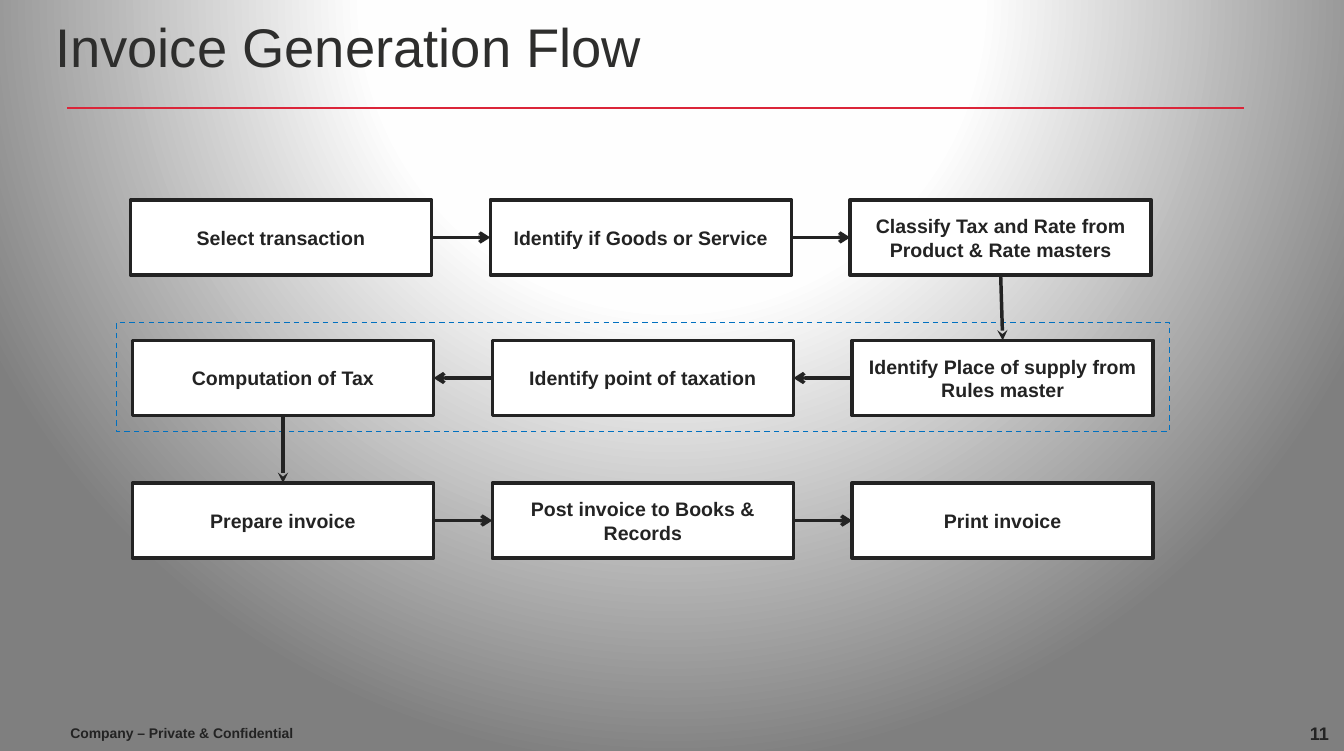
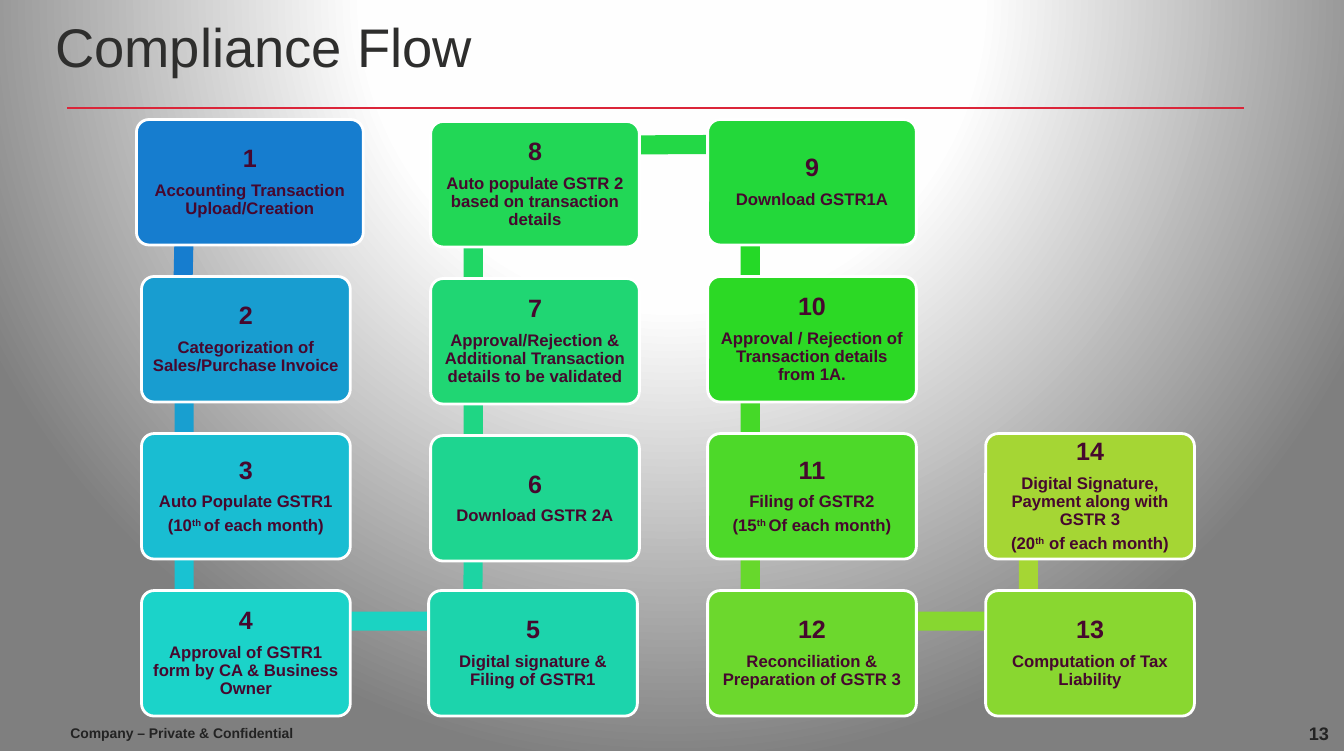
from lxml import etree
from pptx import Presentation
from pptx.dml.color import RGBColor
from pptx.enum.dml import MSO_LINE
from pptx.enum.shapes import MSO_CONNECTOR, MSO_SHAPE
from pptx.enum.text import MSO_ANCHOR, PP_ALIGN
from pptx.oxml import parse_xml
from pptx.oxml.ns import nsdecls, qn
from pptx.util import Inches, Pt

RECT = MSO_SHAPE.RECTANGLE
ROUND = MSO_SHAPE.ROUNDED_RECTANGLE
LINE = MSO_CONNECTOR.STRAIGHT
DASH = MSO_LINE.DASH
TOP, MID = MSO_ANCHOR.TOP, MSO_ANCHOR.MIDDLE
LEFT, MIDST, RIGHT = PP_ALIGN.LEFT, PP_ALIGN.CENTER, PP_ALIGN.RIGHT

FONT = "Arial"
INK, WHITE, RED, BLUE = "232323", "FFFFFF", "DB2539", "0070C0"
HEAD, PLUM = "2E2E2D", "46082E"
STOPS = [(0, "FFFFFF"), (40, "FEFEFE"), (100, "7F7F7F")]
FOOT = "Company – Private & Confidential"

STEPS = [
    (0, 0, "Select transaction"),
    (1, 0, "Identify if Goods or Service"),
    (2, 0, "Classify Tax and Rate from Product & Rate masters"),
    (2, 1, "Identify Place of supply from Rules master"),
    (1, 1, "Identify point of taxation"),
    (0, 1, "Computation of Tax"),
    (0, 2, "Prepare invoice"),
    (1, 2, "Post invoice to Books & Records"),
    (2, 2, "Print invoice"),
]
ROWS = [1.99, 3.39, 4.81]

CARDS = [
    (0, 0, "167DCF", ["Accounting Transaction Upload/Creation"]),
    (0, 1, "189DD0", ["Categorization of Sales/Purchase Invoice"]),
    (0, 2, "19BDD2", ["Auto Populate GSTR1", ("(10", "th ", "of each month)")]),
    (0, 3, "1BD3C9", ["Approval of GSTR1 form by CA & Business Owner"]),
    (1, 3, "1CD4AC", ["Digital signature & Filing of GSTR1"]),
    (1, 2, "1ED590", ["Download GSTR 2A"]),
    (1, 1, "20D673", ["Approval/Rejection & Additional Transaction "
                      "details to be validated"]),
    (1, 0, "22D756", ["Auto populate GSTR 2 based on transaction details"]),
    (2, 0, "23D83A", ["Download GSTR1A"]),
    (2, 1, "2CD925", ["Approval / Rejection of Transaction details from 1A."]),
    (2, 2, "4DD929", ["Filing of GSTR2", ("(15", "th ", "Of each month)")]),
    (2, 3, "6CD82D", ["Reconciliation & Preparation of GSTR 3"]),
    (3, 3, "89D730", ["Computation of Tax Liability"]),
    (3, 2, "A5D634", ["Digital Signature, Payment along with GSTR 3",
                      ("(20", "th", " of each month)")]),
]
LINKS = ["167DCF", "189FD0", "19C2D2", "1BD3C2", "1DD4A3", "1FD684", "21D765",
         "23D846", "25D927", "45D928", "67D82C", "87D730", "A5D634"]
COLS = [1.41, 4.29, 7.05, 9.82]
TILT = {1: 1.2, 5: 0.4, 8: -0.3}
NUDGE = {1: (-0.05, 0, 0.18), 5: (-0.02, 0, 0), 6: (0, 0.02, 0),
         7: (0, 0.02, 0), 8: (0, 0.02, 0)}


def rgb(code):
    return RGBColor.from_string(code)


def inches(*vals):
    return [Inches(v) for v in vals]


def backdrop(master):
    fill = master.background.fill
    fill.gradient()
    old = next(master.element.iter(qn("a:gradFill")))
    stops = "".join(f'<a:gs pos="{pos * 1000}"><a:srgbClr val="{code}"/></a:gs>'
                    for pos, code in STOPS)
    new = parse_xml(
        f'<a:gradFill {nsdecls("a")} rotWithShape="1"><a:gsLst>{stops}</a:gsLst>'
        '<a:path path="circle"><a:fillToRect l="50000" t="-80000" r="50000" '
        'b="180000"/></a:path></a:gradFill>')
    old.getparent().replace(old, new)


def frame(shape, anchor, side, edge):
    box = shape.text_frame
    box.word_wrap = True
    box.vertical_anchor = anchor
    box.margin_left = box.margin_right = Inches(side)
    box.margin_top = box.margin_bottom = Inches(edge)
    return box


def write(para, text, size, color, bold=True, lift=False):
    run = para.add_run()
    run.text = text
    font = run.font
    font.name, font.size, font.bold = FONT, Pt(size), bold
    font.color.rgb = rgb(color)
    if lift:
        font._element.set("baseline", "30000")


def label(slide, at, text, size, color=INK, bold=True, align=LEFT,
          anchor=MID, side=0.13):
    box = frame(slide.shapes.add_textbox(*inches(*at)), anchor, side, 0.06)
    para = box.paragraphs[0]
    para.alignment = align
    write(para, text, size, color, bold)


def block(slide, at, fill=None, line=None, width=1, kind=RECT):
    shape = slide.shapes.add_shape(kind, *inches(*at))
    shape.shadow.inherit = False
    if fill:
        shape.fill.solid()
        shape.fill.fore_color.rgb = rgb(fill)
    else:
        shape.fill.background()
    if line:
        shape.line.color.rgb = rgb(line)
        shape.line.width = Pt(width)
    else:
        shape.line.fill.background()
    return shape


def rule(slide, ends, color, width, tip=None):
    line = slide.shapes.add_connector(LINE, *inches(*ends))
    line.line.color.rgb = rgb(color)
    line.line.width = Pt(width)
    if tip:
        etree.SubElement(line.line._get_or_add_ln(), qn("a:tailEnd"), type=tip)
    etree.SubElement(line._element.spPr, qn("a:effectLst"))
    return line


def page(deck, title, num):
    slide = deck.slides.add_slide(deck.slide_layouts[6])
    label(slide, (12.19, 7.13, 1.18, 0.35), num, 13, align=RIGHT)
    rule(slide, (0.67, 1.08, 12.39, 1.08), RED, 1.5)
    label(slide, (0.57, 7.16, 8.38, 0.3), FOOT, 10, anchor=TOP)
    label(slide, (0.55, 0, 12.26, 0.92), title, 39, HEAD, False, side=0)
    return slide


def step(slide, col, row, text):
    left = 1.3 + 3.585 * col + (0.02 if row else 0)
    shape = block(slide, (left, ROWS[row], 3, 0.75), WHITE, INK, 2.5)
    para = frame(shape, MID, 0.1, 0.1).paragraphs[0]
    para.alignment = MIDST
    write(para, text, 14, INK)
    return shape


def arrow(slide, start, end, across):
    tip = "arrow" if across else "stealth"
    line = rule(slide, (0, 0, 1, 1), INK, 2.5, tip)
    out, into = {1: (3, 1), -1: (1, 3), 0: (2, 0)}[across]
    line.begin_connect(start, out)
    line.end_connect(end, into)


def invoice(slide):
    boxes = [step(slide, *item) for item in STEPS]
    area = block(slide, (1.16, 3.21, 10.49, 1.09), line=BLUE)
    area.line.dash_style = DASH
    for i in range(len(boxes) - 1):
        arrow(slide, boxes[i], boxes[i + 1], STEPS[i + 1][0] - STEPS[i][0])


def place(num):
    col, row = CARDS[num - 1][:2]
    return COLS[col], 1.19 + 1.564 * row


def link(slide, num, color):
    (left, top), (left2, top2) = place(num), place(num + 1)
    if left == left2:
        at = (left + 0.33, min(top, top2) + 0.31, 0.19, 1.56)
    else:
        drop = 0.21 if top > 2 else 0.16
        at = (left + 0.42, top + drop, left2 - left, 0.19)
    block(slide, at, color).rotation = TILT.get(num, 0)


def card(slide, num, color, lines):
    left, top = place(num)
    dx, dy, grow = NUDGE.get(num, (0, 0, 0))
    at = (left + dx, top + dy, 2.08 + grow, 1.25)
    shape = block(slide, at, color, WHITE, 2, ROUND)
    shape.adjustments[0] = 0.1
    inset = 0.05 if num in (11, 14) else 0.07
    box = frame(shape, MID, inset, inset)
    for i, text in enumerate([str(num)] + lines):
        para = box.add_paragraph() if i else box.paragraphs[0]
        size = 12 if i else 18
        para.alignment = MIDST
        para.line_spacing = 0.9
        para.space_after = Pt(0.35 * size)
        parts = (text,) if isinstance(text, str) else text
        for j, part in enumerate(parts):
            write(para, part, size, PLUM, lift=j == 1)


def comply(slide):
    for num, color in enumerate(LINKS, 1):
        link(slide, num, color)
    for num, (_, _, color, lines) in enumerate(CARDS, 1):
        card(slide, num, color, lines)


def main():
    deck = Presentation()
    deck.slide_width, deck.slide_height = inches(13.39, 7.48)
    backdrop(deck.slide_master)
    invoice(page(deck, "Invoice Generation Flow", "11"))
    comply(page(deck, "Compliance Flow", "13"))
    deck.save("out.pptx")


if __name__ == "__main__":
    main()
